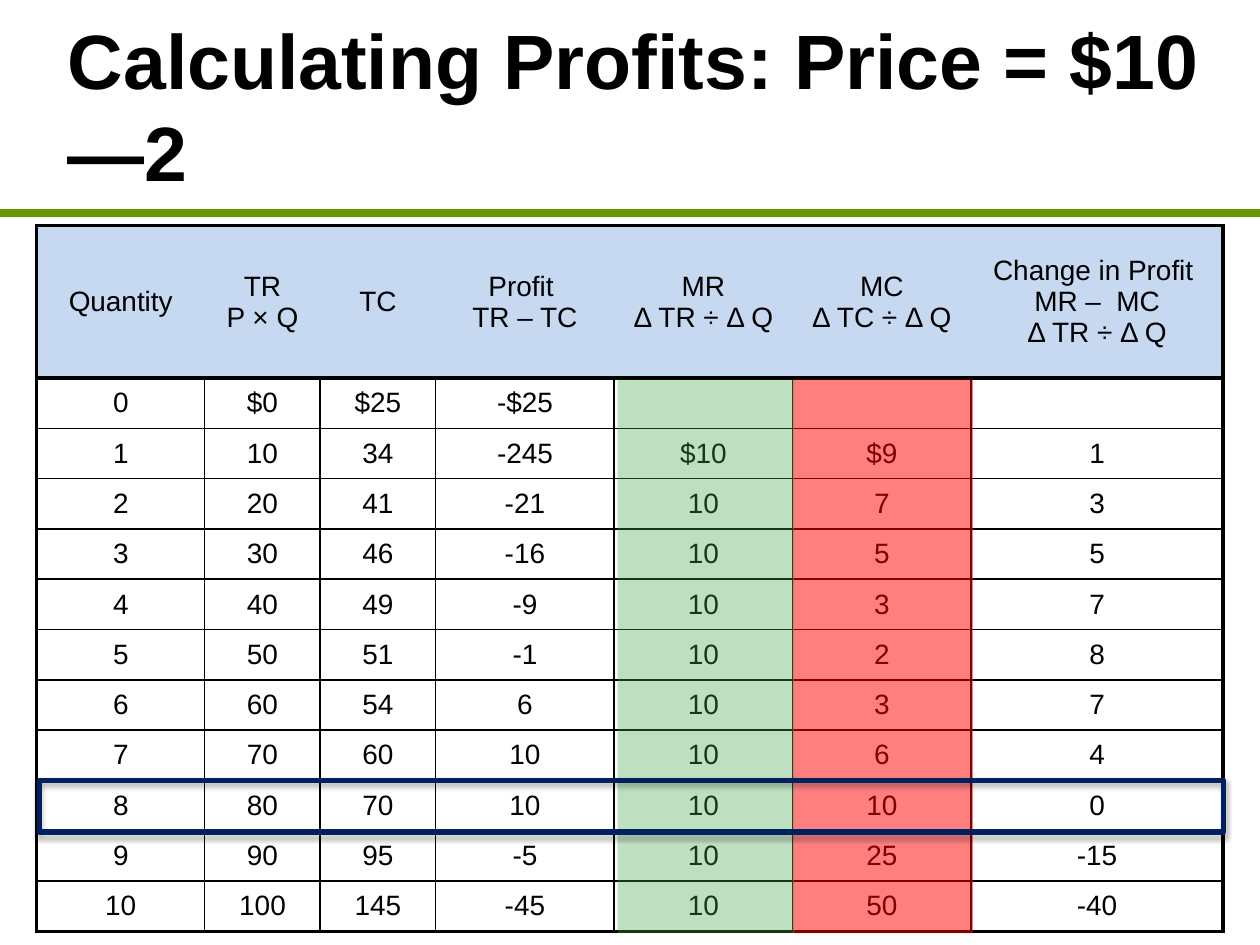
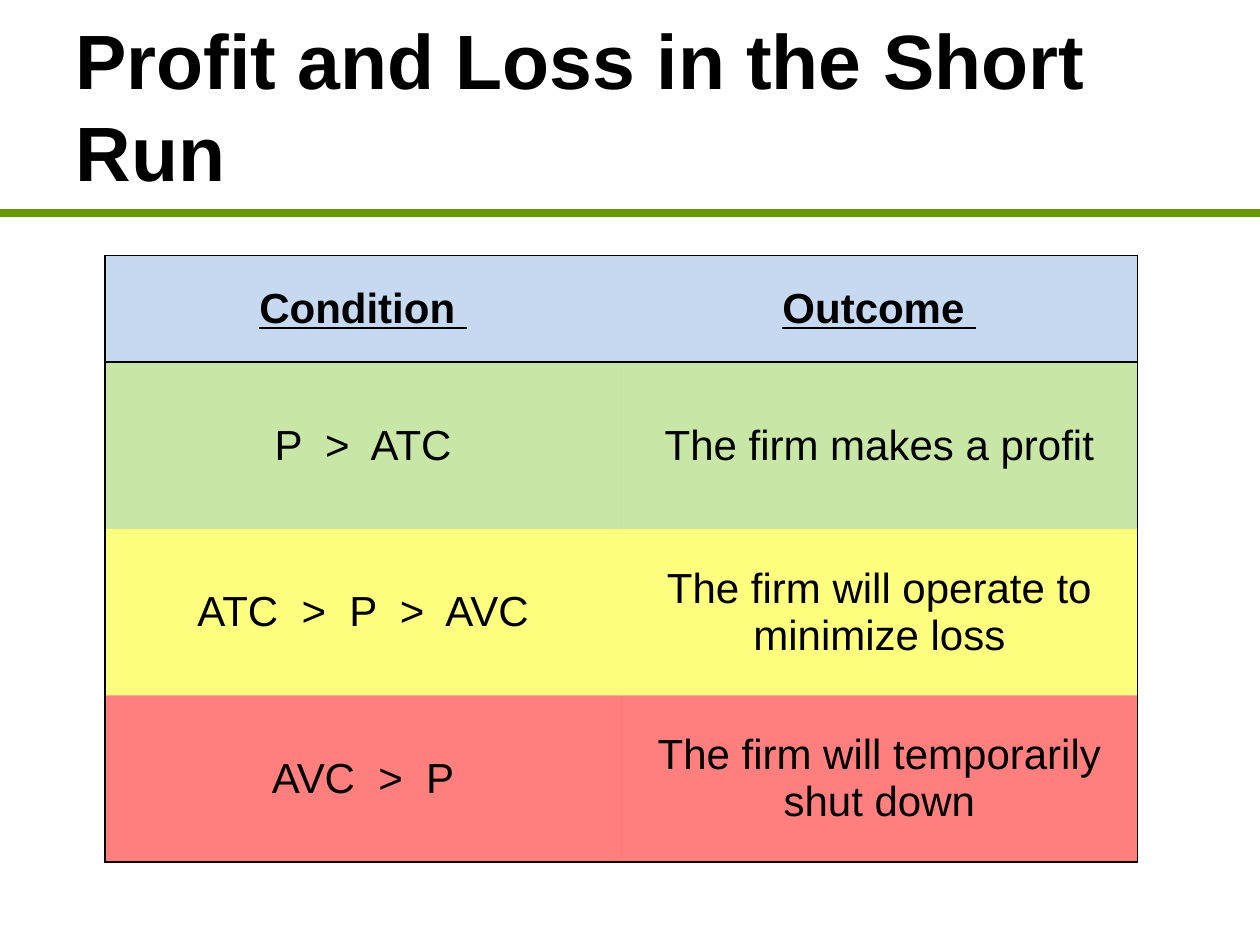
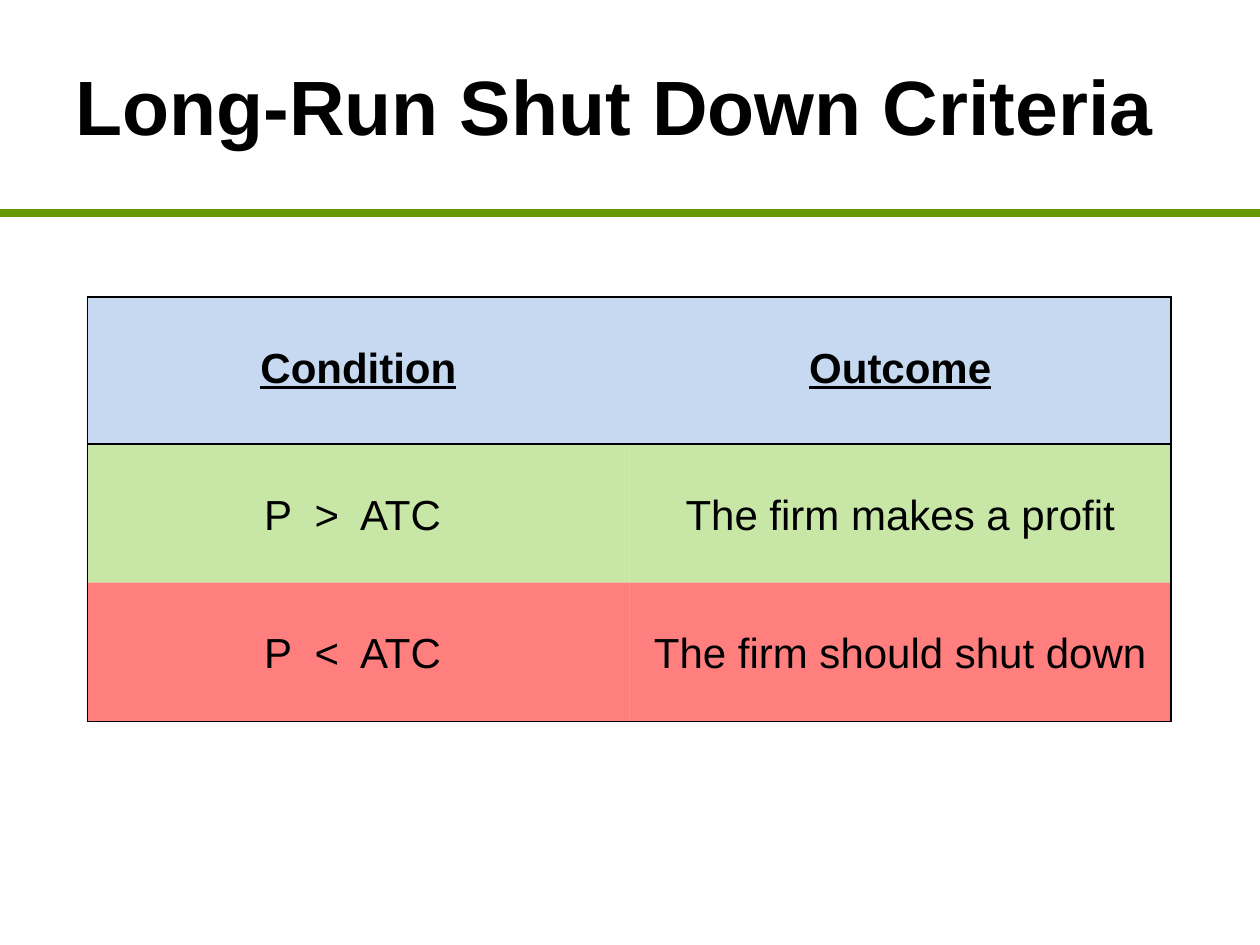
from lxml.etree import SubElement
from pptx import Presentation
from pptx.dml.color import RGBColor
from pptx.enum.shapes import MSO_CONNECTOR, MSO_SHAPE
from pptx.enum.text import MSO_ANCHOR, MSO_AUTO_SIZE, PP_ALIGN
from pptx.oxml.ns import qn
from pptx.util import Pt

HUES = {
    "ink": "000000", "rule": "669900", "head": "C6D9F1", "gain": "92D050",
    "warn": "FFFF00", "loss": "FF0000", "green": "43A64A", "navy": "002060",
}
FONT = "Arial"
PROFIT = [
    ["Quantity", "TR\nP × Q", "TC", "Profit \nTR – TC", "MR\nΔ TR ÷ Δ Q",
     "MC\nΔ TC ÷ Δ Q", "Change in Profit \nMR –  MC\nΔ TR ÷ Δ Q"],
    ["0", "$0", "$25", "-$25", "", "", ""],
    ["1", "10", "34", "-245", "$10", "$9", "1"],
    ["2", "20", "41", "-21", "10", "7", "3"],
    ["3", "30", "46", "-16", "10", "5", "5"],
    ["4", "40", "49", "-9", "10", "3", "7"],
    ["5", "50", "51", "-1", "10", "2", "8"],
    ["6", "60", "54", "6", "10", "3", "7"],
    ["7", "70", "60", "10", "10", "6", "4"],
    ["8", "80", "70", "10", "10", "10", "0"],
    ["9", "90", "95", "-5", "10", "25", "-15"],
    ["10", "100", "145", "-45", "10", "50", "-40"],
]
SHORT = [
    ["Condition ", "Outcome "],
    ["P  >  ATC", "The firm makes a profit"],
    ["ATC  >  P  >  AVC", "The firm will operate to minimize loss"],
    ["AVC  >  P", "The firm will temporarily shut down"],
]
LONG = [
    ["Condition", "Outcome"],
    ["P  >  ATC ", "The firm makes a profit"],
    ["P  <  ATC ", "The firm should shut down"],
]


def hue(name):
    """Return the named colour."""
    return RGBColor.from_string(HUES[name])


def write(frame, text, size=16, bold=False, under=False, align=PP_ALIGN.CENTER):
    """Put formatted text in a frame, one paragraph a line."""
    frame.text = text
    for para in frame.paragraphs:
        para.alignment = align
        for run in para.runs:
            font = run.font
            font.name, font.size = FONT, Pt(size)
            font.bold, font.underline = bold, under
            font.color.rgb = hue("ink")


def paint(fill, owner, name, alpha=100):
    """Fill with a named colour at an opacity in percent."""
    if not name:
        fill.background()
        return
    fill.solid()
    fill.fore_color.rgb = hue(name)
    if alpha < 100:
        color = owner.find(qn("a:solidFill"))[0]
        SubElement(color, qn("a:alpha"), val=str(alpha * 1000))


def border(props, sides):
    """Draw the cell sides, leaving out those of zero width."""
    for side, width in sides.items():
        line = SubElement(props, qn("a:ln" + side), w=str(Pt(width)))
        if width:
            fill = SubElement(line, qn("a:solidFill"))
            SubElement(fill, qn("a:srgbClr"), val=HUES["ink"])
        else:
            SubElement(line, qn("a:noFill"))


def grid(slide, box, data, cols, rows, fills, edge=1, inner=0, size=24,
         strong=True, pad=5.76, drop=None):
    """Add a table with an outer frame, a ruled header and row fills."""
    left, top = box
    table = slide.shapes.add_table(
        len(rows), len(cols), Pt(left), Pt(top), Pt(sum(cols)), Pt(sum(rows))).table
    for col, width in zip(table.columns, cols):
        col.width = Pt(width)
    for row, height in zip(table.rows, rows):
        row.height = Pt(height)
    for r, line in enumerate(data):
        mid = inner if r else 0
        for c, text in enumerate(line):
            cell = table.cell(r, c)
            cell.margin_left = cell.margin_right = Pt(pad)
            cell.margin_top, cell.margin_bottom = Pt(drop or 0), Pt(0)
            cell.vertical_anchor = MSO_ANCHOR.TOP if drop else MSO_ANCHOR.MIDDLE
            head = strong and r == 0
            write(cell.text_frame, text, size=size, bold=head, under=head)
            props = cell._tc.get_or_add_tcPr()
            border(props, {
                "L": mid if c else edge,
                "R": edge if c == len(cols) - 1 else mid,
                "T": edge if r < 2 else inner,
                "B": edge if r in (0, len(rows) - 1) else inner,
            })
            paint(cell.fill, props, fills[r], 50 if r else 100)


def block(slide, box, name=None, alpha=100, line=None):
    """Add a plain rectangle with an optional fill and outline."""
    shape = slide.shapes.add_shape(MSO_SHAPE.RECTANGLE, *map(Pt, box))
    shape.shadow.inherit = False
    paint(shape.fill, shape.element.spPr, name, alpha)
    if line:
        shape.line.color.rgb = hue(line)
        shape.line.width = Pt(3)
    else:
        shape.line.fill.background()
    return shape


def shade(shape):
    """Cast a soft shadow straight down."""
    glow = SubElement(shape.element.spPr.find(qn("a:effectLst")), qn("a:outerShdw"),
                      blurRad=str(Pt(3.1)), dist=str(Pt(1.8)), dir="5400000", rotWithShape="0")
    color = SubElement(glow, qn("a:srgbClr"), val=HUES["ink"])
    SubElement(color, qn("a:alpha"), val="35000")


def rule(slide):
    """Draw the green rule and hand it to the slide's layout."""
    line = slide.shapes.add_connector(MSO_CONNECTOR.STRAIGHT, 0, Pt(121.5), Pt(720), Pt(121.5))
    line.line.color.rgb = hue("rule")
    line.line.width = Pt(4.5)
    SubElement(line.element.spPr, qn("a:effectLst"))
    slide.slide_layout.shapes.element.append(line.element)


def page(deck, text, left=36, width=648):
    """Add a slide with its title."""
    slide = deck.slides.add_slide(deck.slide_layouts[5])
    title = slide.shapes.title
    title.left, title.top, title.width, title.height = map(Pt, (left, 0, width, 120))
    frame = title.text_frame
    frame.word_wrap = True
    frame.auto_size = MSO_AUTO_SIZE.NONE
    frame.vertical_anchor = MSO_ANCHOR.MIDDLE
    write(frame, text, size=44, bold=True, align=PP_ALIGN.LEFT)
    return slide


def profit(slide, box):
    """Place the profit table, its tinted columns and the marked row."""
    left, top = box
    head, step, count = 87, 28.75, len(PROFIT) - 1
    grid(slide, box, PROFIT, [96, 66, 66, 102, 102, 102, 144], [head] + [step] * count,
         ["head"] + [None] * count, edge=2.25, inner=1, size=16, strong=False, pad=4.32)
    tall = step * count
    block(slide, (left + 432, top + head + 1, 103, tall), "loss", 50)
    block(slide, (left + 332, top + head + 1, 101, tall), "green", 34)
    shade(block(slide, (left + 1.5, top + head + 8 * step, 676.5, 29.5), line="navy"))


def main():
    """Build and save the deck."""
    deck = Presentation()
    deck.slide_width, deck.slide_height = Pt(720), Pt(540)
    slide = page(deck, "Calculating Profits: Price = $10—2", 31.5, 663)
    rule(slide)
    profit(slide, (21, 129))
    slide = page(deck, "Profit and Loss in the Short Run")
    grid(slide, (60, 146), SHORT, [295] * 2, [61] + [95.2] * 3,
         ["head", "gain", "warn", "loss"])
    slide = page(deck, "Long-Run Shut Down Criteria")
    grid(slide, (50, 169.6), LONG, [309.6] * 2, [84] + [79.4] * 2,
         ["head", "gain", "loss"], drop=27.6)
    deck.save("out.pptx")


if __name__ == "__main__":
    main()
